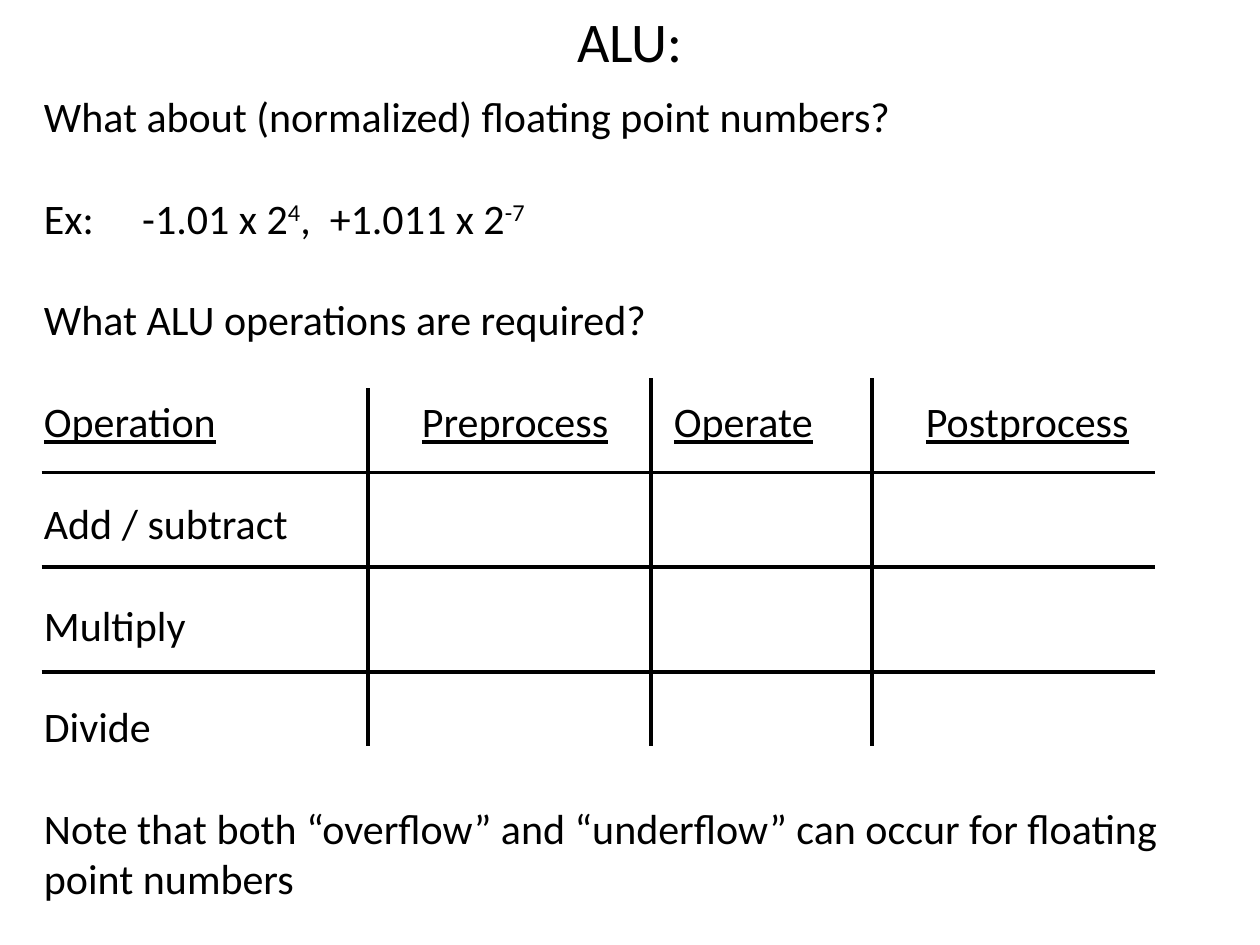
from pptx import Presentation
from pptx.dml.color import RGBColor
from pptx.enum.shapes import MSO_CONNECTOR
from pptx.enum.text import MSO_ANCHOR, PP_ALIGN
from pptx.oxml.ns import qn
from pptx.util import Inches, Pt
from lxml.etree import SubElement

COLORS = {"ink": "000000", "background": "FFFFFF"}
FONT = "Calibri"
BODY_SIZE = 24
LINE_GAP = 29.3
PLAIN, UNDERLINED, RAISED = "plain", "underlined", "raised"

EXAMPLE = [("Ex:\t-1.01 x 2", PLAIN), ("4", RAISED),
           (",  +1.011 x 2", PLAIN), ("-7", RAISED)]
HEADINGS = [("Operation", UNDERLINED), ("\t", PLAIN),
            ("Preprocess", UNDERLINED), ("\t", PLAIN),
            ("Operate", UNDERLINED), ("\t", PLAIN),
            ("Postprocess", UNDERLINED)]
BODY = [
    ([("What about (normalized) floating point numbers?", PLAIN)], []),
    (EXAMPLE, [0.78]),
    ([("What ALU operations are required?", PLAIN)], []),
    (HEADINGS, [3, 5, 7]),
    ([("Add / subtract", PLAIN)], []),
    ([("Multiply", PLAIN)], []),
    ([("Divide", PLAIN)], []),
    ([("Note that both “overflow” and “underflow” can occur for floating "
       "point numbers", PLAIN)], []),
]
GRID_LEFT, GRID_RIGHT, GRID_BOTTOM = 0.33, 9.17, 5.92
COLUMN_RULES = [(2.92, 3.08), (5.17, 3), (6.92, 3)]
ROW_RULES = [3.75, 4.5, 5.33]


def add_text_box(page, left, top, width, height):
    """Add a wrapping text box and return its text frame."""
    box = page.shapes.add_textbox(Inches(left), Inches(top),
                                  Inches(width), Inches(height))
    box.text_frame.word_wrap = True
    return box.text_frame


def add_span(para, text, size, style=PLAIN):
    """Append one formatted run to a paragraph."""
    span = para.add_run()
    span.text = text
    span.font.name = FONT
    span.font.size = Pt(size)
    span.font.color.rgb = RGBColor.from_string(COLORS["ink"])
    if style == UNDERLINED:
        span.font.underline = True
    elif style == RAISED:
        span.font._element.set("baseline", "30000")


def set_tab_stops(para, stops):
    """Give a paragraph left tab stops at the given inches."""
    tab_list = SubElement(para._p.get_or_add_pPr(), qn("a:tabLst"))
    for stop in stops:
        SubElement(tab_list, qn("a:tab"), pos=str(Inches(stop)), algn="l")


def add_title(page, text):
    """Add the centred slide title."""
    frame = add_text_box(page, 0.5, 0, 9, 0.63)
    frame.vertical_anchor = MSO_ANCHOR.MIDDLE
    para = frame.paragraphs[0]
    para.alignment = PP_ALIGN.CENTER
    add_span(para, text, 32)


def add_body(page):
    """Add the body paragraphs, one empty line's height apart."""
    frame = add_text_box(page, 0.25, 0.67, 9.25, 6.56)
    for index, (spans, stops) in enumerate(BODY):
        para = frame.add_paragraph() if index else frame.paragraphs[0]
        if index:
            para.space_before = Pt(LINE_GAP)
        if stops:
            set_tab_stops(para, stops)
        for text, style in spans:
            add_span(para, text, BODY_SIZE, style)


def add_rule(page, x1, y1, x2, y2):
    """Add one straight grid line."""
    rule = page.shapes.add_connector(MSO_CONNECTOR.STRAIGHT, Inches(x1),
                                     Inches(y1), Inches(x2), Inches(y2))
    rule.line.color.rgb = RGBColor.from_string(COLORS["ink"])
    rule.line.width = Pt(2.25)
    SubElement(rule._element.spPr, qn("a:effectLst"))


def main():
    """Build the slide and save it."""
    deck = Presentation()
    deck.slide_width, deck.slide_height = Inches(10), Inches(7.5)
    page = deck.slides.add_slide(deck.slide_layouts[6])
    page.background.fill.solid()
    page.background.fill.fore_color.rgb = RGBColor.from_string(
        COLORS["background"])
    add_title(page, "ALU:")
    add_body(page)
    for x, top in COLUMN_RULES:
        add_rule(page, x, top, x, GRID_BOTTOM)
    for y in ROW_RULES:
        add_rule(page, GRID_LEFT, y, GRID_RIGHT, y)
    deck.save("out.pptx")


if __name__ == "__main__":
    main()
